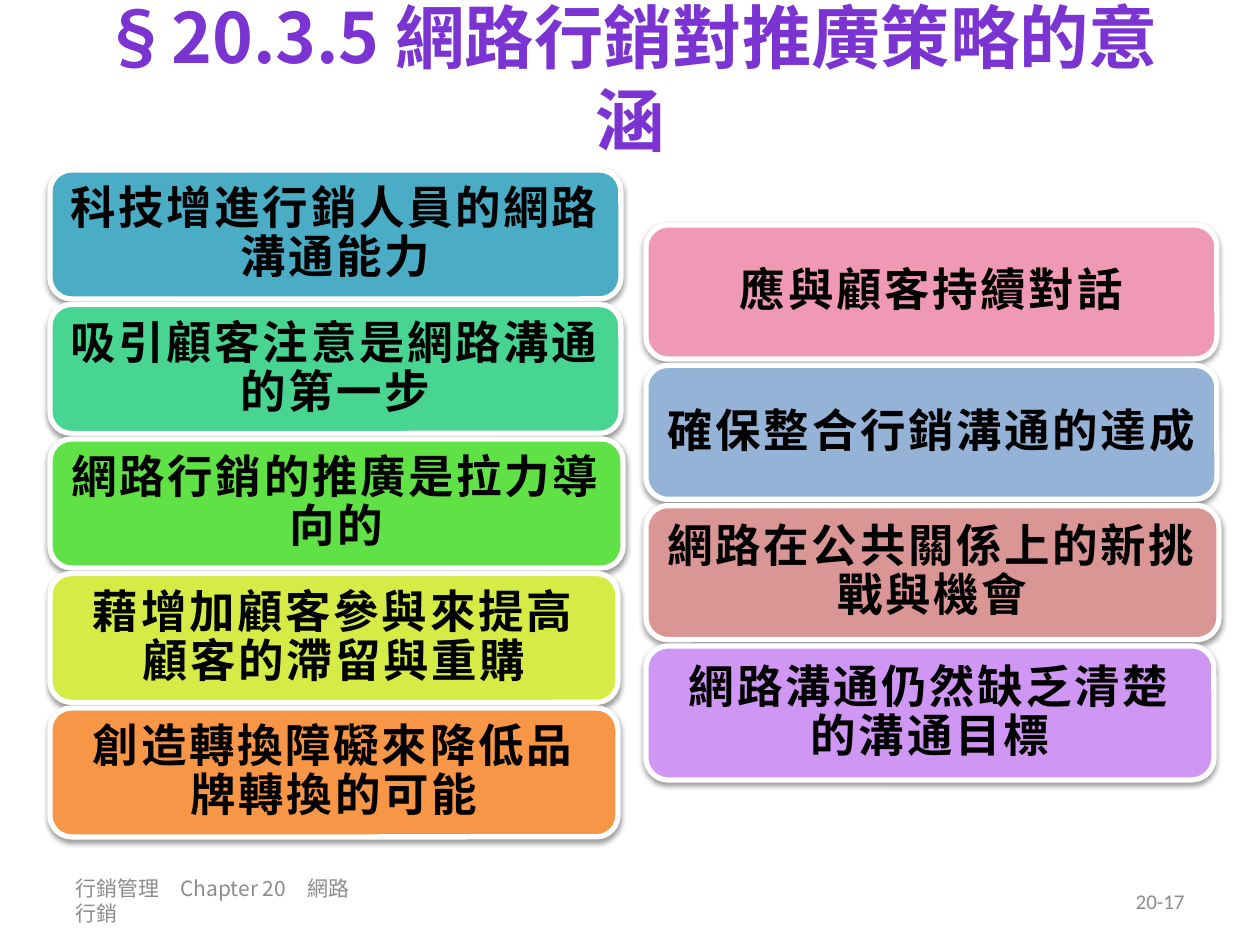
from dataclasses import dataclass

from lxml import etree
from pptx import Presentation
from pptx.dml.color import RGBColor
from pptx.enum.shapes import MSO_SHAPE
from pptx.enum.text import MSO_ANCHOR, PP_ALIGN
from pptx.oxml.ns import qn
from pptx.util import Pt

PX = 914400 // 126
LEFT, CENTER, RIGHT = PP_ALIGN.LEFT, PP_ALIGN.CENTER, PP_ALIGN.RIGHT
MIDDLE = MSO_ANCHOR.MIDDLE
ROUNDED = MSO_SHAPE.ROUNDED_RECTANGLE


@dataclass(frozen=True)
class Theme:
    latin: str = "Calibri"
    cjk: str = "Noto Sans CJK SC"
    title: str = "7B34D2"
    footer: str = "8C8C8C"
    ink: str = "000000"
    outline: str = "FFFFFF"
    title_size: float = 39.6
    card_size: int = 26
    footer_size: int = 12


THEME = Theme()


def write(frame, parts, size, color, align, bold=False):
    """Fill a frame with one paragraph made of (text, font name) parts."""
    frame.word_wrap = True
    frame.vertical_anchor = MIDDLE
    paragraph = frame.paragraphs[0]
    paragraph.alignment = align
    paragraph.font.size = Pt(size)
    paragraph.font.bold = bold
    paragraph.font.color.rgb = RGBColor.from_string(color)
    for text, font_name in parts:
        run = paragraph.add_run()
        run.text = text
        run.font.name = font_name
    return paragraph


def add_soft_shadow(shape):
    shape.shadow.inherit = False
    effects = shape._element.spPr.find(qn("a:effectLst"))
    shadow = etree.SubElement(effects, qn("a:outerShdw"), blurRad=str(Pt(3.1)),
                              dist=str(Pt(1.6)), dir="5400000", rotWithShape="0")
    black = etree.SubElement(shadow, qn("a:srgbClr"), val="000000")
    etree.SubElement(black, qn("a:alpha"), val="38000")


prs = Presentation()
prs.slide_width, prs.slide_height = 1260 * PX, 945 * PX
slide = prs.slides.add_slide(prs.slide_layouts[6])

title = slide.shapes.add_textbox(63 * PX, 0, 1134 * PX, 155 * PX)
write(title.text_frame,
      [("§20.3.5 ", THEME.cjk), ("網路行銷對推廣策略的意涵", THEME.latin)],
      THEME.title_size, THEME.title, CENTER, bold=True)

footers = [
    (63, 309, "行銷管理　Chapter 20　網路行銷", THEME.cjk, LEFT),
    (903, 294, "20-17", THEME.latin, RIGHT),
]
for left, width, text, font_name, align in footers:
    footer = slide.shapes.add_textbox(left * PX, 876 * PX, width * PX, 50 * PX)
    write(footer.text_frame, [(text, font_name)],
          THEME.footer_size, THEME.footer, align)

# Each column: left, first card top, last card top, card height, cards
columns = [
    (50, 170, 708, 129, [
        ("科技增進行銷人員的網路溝通能力", "4BACC6", 571),
        ("吸引顧客注意是網路溝通的第一步", "48D491", 571),
        ("網路行銷的推廣是拉力導向的", "60E146", 573),
        ("藉增加顧客參與來提高顧客的滯留與重購", "D5EC46", 568),
        ("創造轉換障礙來降低品牌轉換的可能", "F79646", 568),
    ]),
    (646, 225, 646, 134, [
        ("應與顧客持續對話", "EF99B4", 571),
        ("確保整合行銷溝通的達成", "95B3D7", 571),
        ("網路在公共關係上的新挑戰與機會", "D99694", 573),
        ("網路溝通仍然缺乏清楚的溝通目標", "D096F4", 568),
    ]),
]
for left, first_top, last_top, height, cards in columns:
    pitch = (last_top - first_top) / (len(cards) - 1)
    for row, (message, color, width) in enumerate(cards):
        top = round((first_top + row * pitch) * PX)
        card = slide.shapes.add_shape(ROUNDED, left * PX, top, width * PX, height * PX)
        add_soft_shadow(card)
        card.fill.solid()
        card.fill.fore_color.rgb = RGBColor.from_string(color)
        card.line.color.rgb = RGBColor.from_string(THEME.outline)
        card.line.width = Pt(3)
        frame = card.text_frame
        frame.margin_left = frame.margin_right = 14 * PX
        frame.margin_top = frame.margin_bottom = 6 * PX
        paragraph = write(frame, [(message, THEME.latin)],
                          THEME.card_size, THEME.ink, CENTER, bold=True)
        paragraph.line_spacing = 0.9
        paragraph.runs[0]._r.get_or_add_rPr().set("spc", "150")

prs.save("out.pptx")
